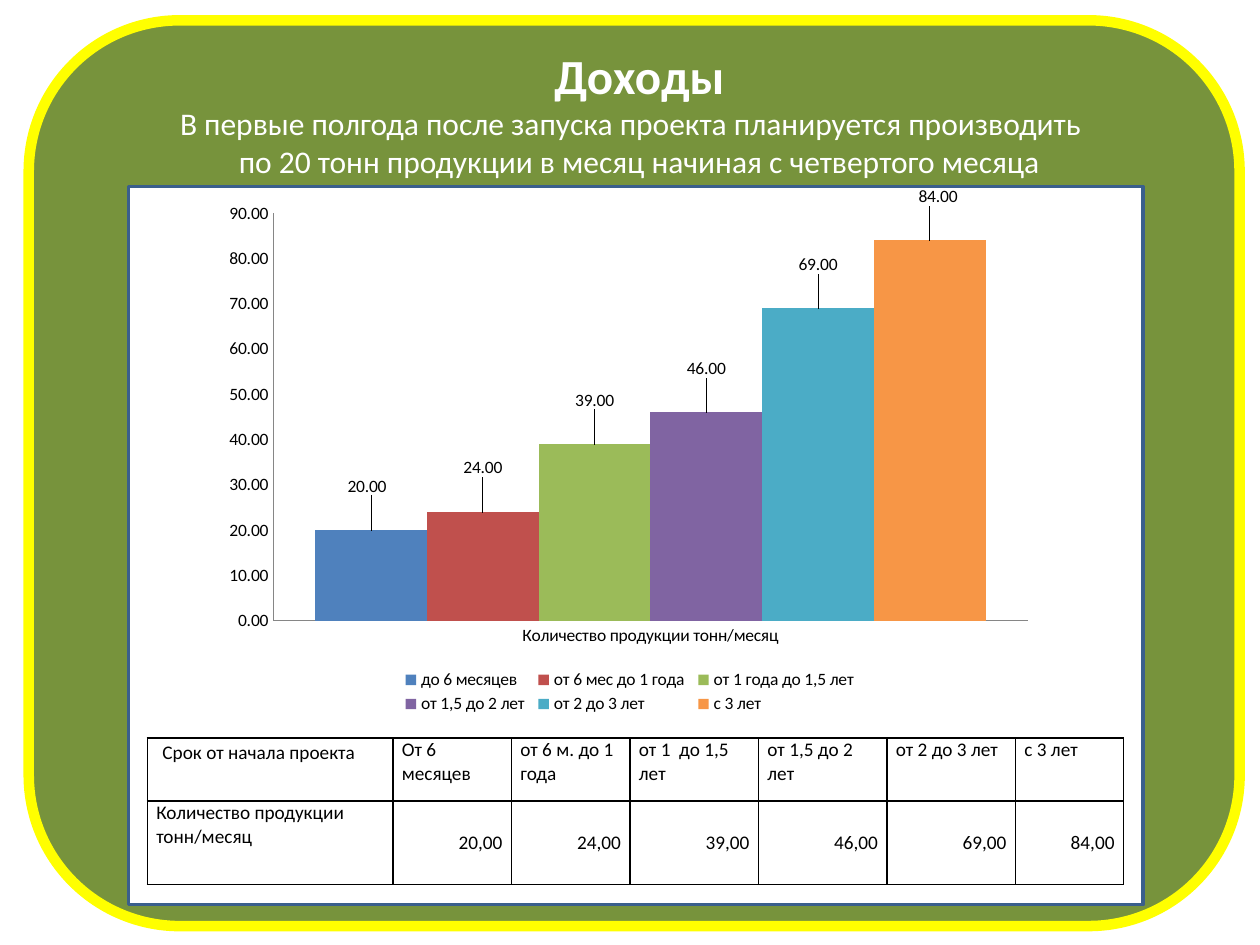
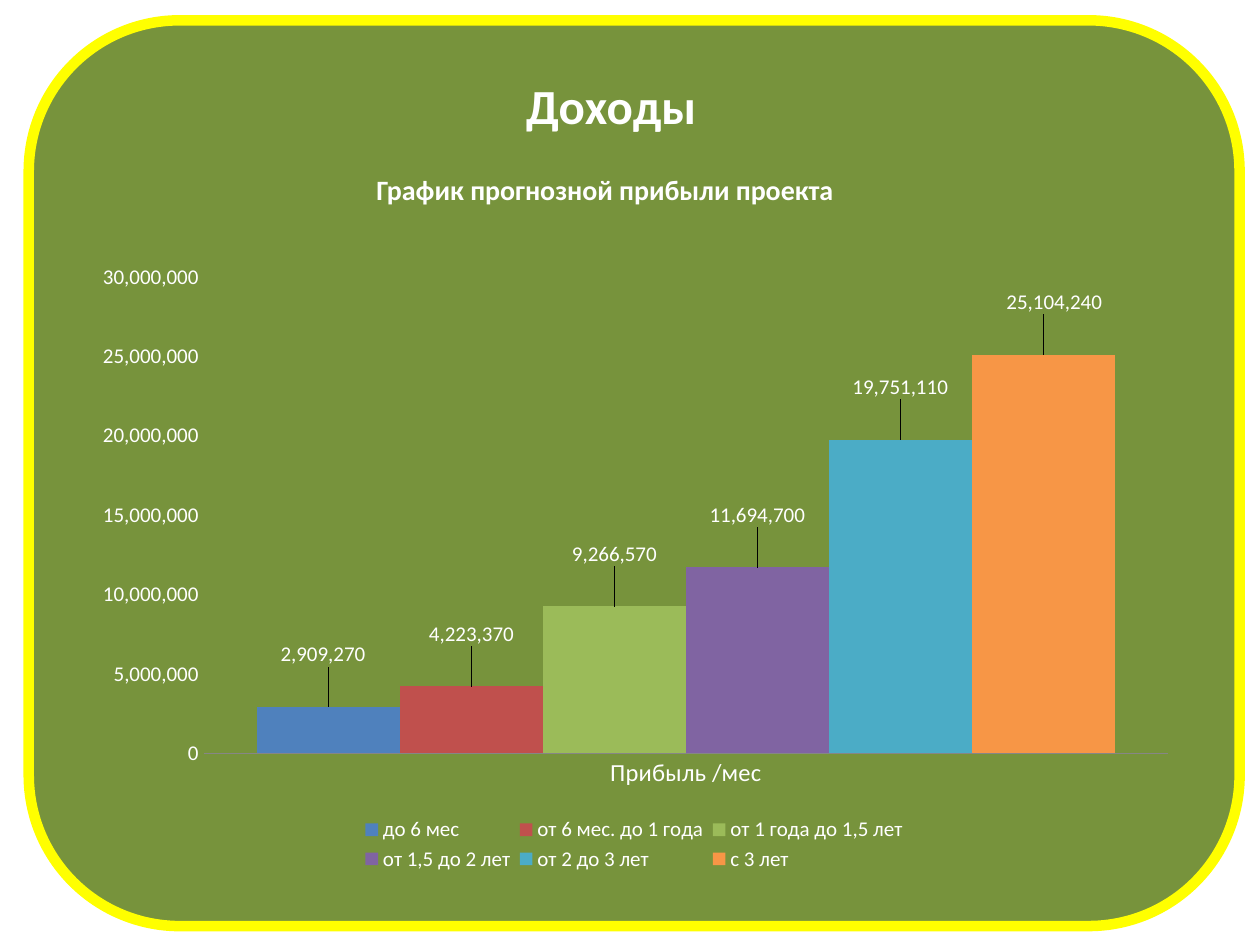
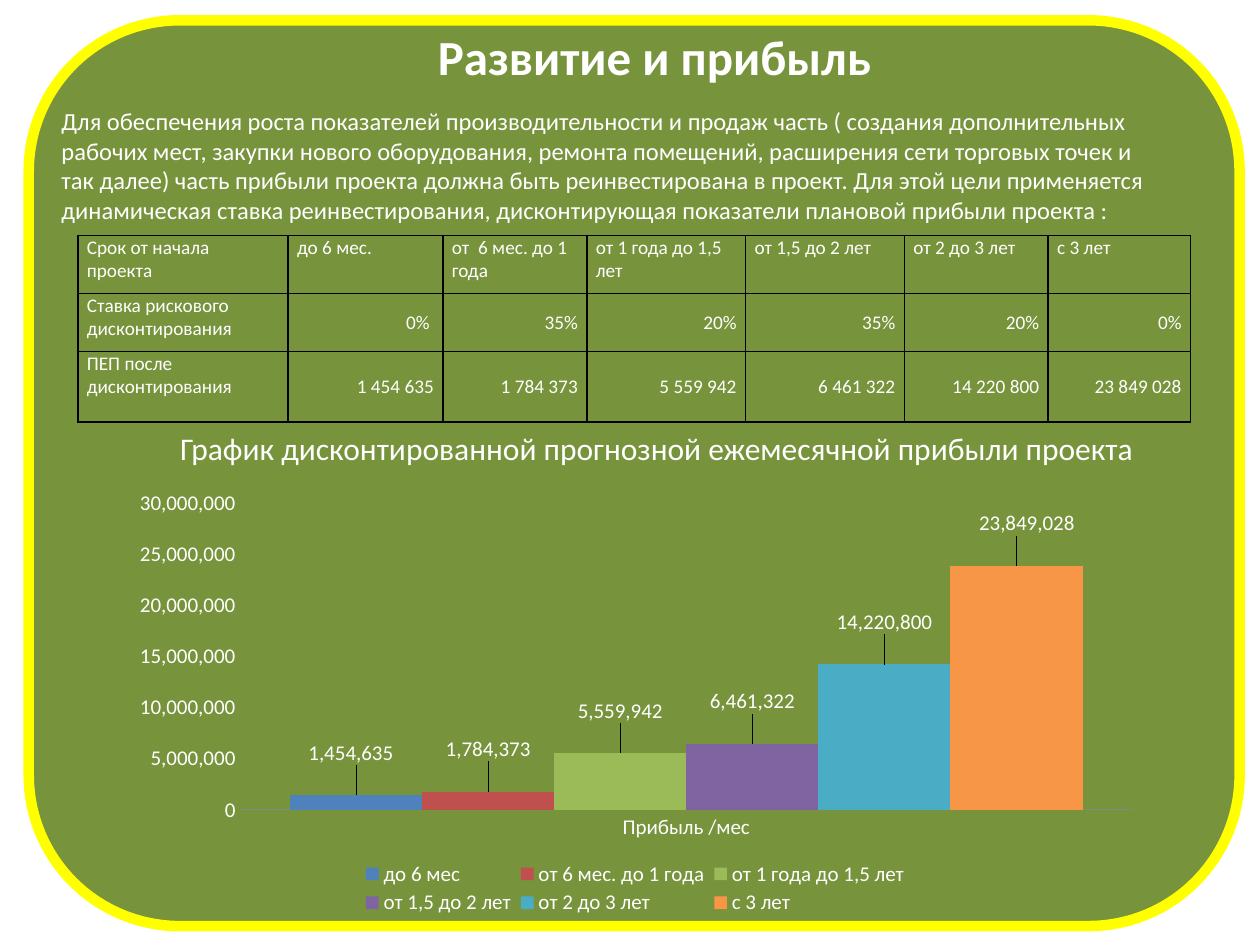
from lxml import etree
from pptx import Presentation
from pptx.chart.data import CategoryChartData
from pptx.dml.color import RGBColor
from pptx.enum.chart import XL_CHART_TYPE, XL_LABEL_POSITION, XL_LEGEND_POSITION, XL_TICK_MARK
from pptx.enum.shapes import MSO_SHAPE
from pptx.enum.text import MSO_ANCHOR, PP_ALIGN
from pptx.oxml import parse_xml
from pptx.oxml.ns import nsdecls, qn
from pptx.util import Cm, Pt

# Shared look
FONT = "Calibri"
WHITE, BLACK, GREEN, YELLOW, BLUE, GREY = "FFFFFF", "000000", "77933C", "FFFF00", "3A5F8C", "868686"
SERIES_COLORS = ["4F81BD", "C0504D", "9BBB59", "8064A2", "4BACC6", "F79646"]
LABEL_DX = [-0.005, 0, 0, 0, 0, 0.01]
LABEL_DY = -0.056
FRAME = (0.58, 0.41, 24.41, 18.26)
LEFT, CENTER, RIGHT = PP_ALIGN.LEFT, PP_ALIGN.CENTER, PP_ALIGN.RIGHT
TITLE = {"size": 28, "bold": True}

# Content: paragraphs are (text, alignment, font, paragraph spacing)
PERIODS = ["до 6 мес", "от 6 мес. до 1 года", "от 1 года до 1,5 лет",
           "от 1,5 до 2 лет", "от 2 до 3 лет", "с 3 лет"]

OUTPUT_TEXT = [
    ("Доходы", CENTER, TITLE, {}),
    ("В первые полгода после запуска проекта планируется производить", LEFT, {"size": 18}, {}),
    ("по 20 тонн продукции в месяц начиная с четвертого месяца", CENTER, {"size": 18}, {}),
]
OUTPUT_CHART = {
    "at": (4.34, 3.76, 16.71, 10.72), "category": "Количество продукции тонн/месяц",
    "names": ["до 6 месяцев", "от 6 мес до 1 года"] + PERIODS[2:],
    "values": [20, 24, 39, 46, 69, 84], "format": "0.00", "max": 90, "step": 10,
    "color": BLACK, "size": 10, "category_size": 10, "axis_line": GREY,
    "plot": (0.07, 0.04, 0.91, 0.775), "legend": (0.22, 0.9, 0.56, 0.1),
}
OUTPUT_TABLE = {
    "at": (2.97, 14.88), "color": BLACK, "space_after": 6,
    "cols": [4.95, 2.39, 2.39, 2.59, 2.59, 2.59, 2.18], "rows": [1.27, 1.68],
    "cells": [
        ["Срок от начала проекта", "От 6 месяцев", "от 6 м. до 1 года", "от 1  до 1,5 лет",
         "от 1,5 до 2 лет", "от 2 до 3 лет", "с 3 лет"],
        ["Количество продукции тонн/месяц", "20,00", "24,00", "39,00", "46,00", "69,00", "84,00"],
    ],
}

PROFIT_TEXT = [
    ("Доходы", CENTER, TITLE, {"space_after": Pt(12)}),
    ("График прогнозной прибыли проекта", LEFT, {"size": 16, "bold": True}, {"line_spacing": 1.5}),
]
PROFIT_CHART = {
    "at": (1.57, 5.08, 22.43, 12.57), "category": "Прибыль /мес", "names": PERIODS,
    "values": [2909270, 4223370, 9266570, 11694700, 19751110, 25104240],
    "format": "#,##0", "max": 30000000, "step": 5000000,
    "color": WHITE, "size": 12, "category_size": 14, "axis_line": None,
    "plot": (0.113, 0.04, 0.867, 0.764), "legend": (0.25, 0.9, 0.5, 0.1),
}

GROWTH_TEXT = [("Развитие и прибыль", CENTER, TITLE, {"space_after": Pt(12)})] + [
    (line, LEFT, {"size": 14}, {}) for line in (
        "Для обеспечения роста показателей производительности и продаж часть ( создания дополнительных",
        "рабочих мест, закупки нового оборудования, ремонта помещений, расширения сети торговых точек и",
        "так далее) часть прибыли проекта должна быть реинвестирована в проект. Для этой цели применяется",
        "динамическая ставка реинвестирования, дисконтирующая показатели плановой прибыли проекта :",
    )]
GROWTH_TABLE = {
    "at": (1.57, 4.75), "color": WHITE, "space_after": 0,
    "cols": [4.24, 3.12, 2.9, 3.2, 3.2, 2.9, 2.87], "rows": [1.17, 1.17, 1.42],
    "cells": [
        ["Срок от начала проекта", "до 6 мес.", "от  6 мес. до 1 года"] + PERIODS[2:],
        ["Ставка рискового дисконтирования", "0% ", "35%", "20%", "35%", "20%", "0%"],
        ["ПЕП после дисконтирования", "1 454 635", "1 784 373", "5 559 942",
         "6 461 322", "14 220 800", "23 849 028"],
    ],
}
GROWTH_CAPTION = [("График дисконтированной прогнозной ежемесячной прибыли проекта", LEFT, {"size": 18}, {})]
GROWTH_CHART = PROFIT_CHART | {
    "at": (2.39, 9.73, 20.83, 8.89), "category_size": 12,
    "values": [1454635, 1784373, 5559942, 6461322, 14220800, 23849028],
    "plot": (0.118, 0.046, 0.863, 0.696), "legend": (0.23, 0.85, 0.54, 0.14),
}


def rgb(color):
    return RGBColor.from_string(color)


def set_attrs(obj, values):
    for name, value in values.items():
        setattr(obj, name, value)


def set_font(font, size, color=WHITE, bold=False, name=FONT):
    set_attrs(font, {"size": Pt(size), "bold": bold, "name": name})
    font.color.rgb = rgb(color)


def add_box(s, kind, at, fill, line, width):
    sp = s.shapes.add_shape(kind, *map(Cm, at))
    sp.shadow.inherit = False
    sp.fill.solid()
    sp.fill.fore_color.rgb = rgb(fill)
    sp.line.color.rgb = rgb(line)
    sp.line.width = Pt(width)


def add_text(s, at, paragraphs, wrap=False):
    tf = s.shapes.add_textbox(*map(Cm, at)).text_frame
    tf.word_wrap = wrap
    for i, (text, align, font, spacing) in enumerate(paragraphs):
        p = tf.add_paragraph() if i else tf.paragraphs[0]
        set_attrs(p, {"alignment": align, **spacing})
        r = p.add_run()
        r.text = text
        set_font(r.font, **font)


def add_borders(cell):
    tc_pr = cell._tc.get_or_add_tcPr()
    for i, side in enumerate("LRTB"):
        tc_pr.insert(i, parse_xml(
            f'<a:ln{side} {nsdecls("a")} w="12700"><a:solidFill><a:srgbClr val="{BLACK}"/>'
            f'</a:solidFill></a:ln{side}>'))


def add_table(s, spec_data):
    cols, rows, cells = (spec_data[key] for key in ("cols", "rows", "cells"))
    size = (sum(cols), sum(rows))
    table = s.shapes.add_table(len(rows), len(cols), *map(Cm, spec_data["at"] + size)).table
    set_attrs(table, {"first_row": False, "horz_banding": False})
    for col, width in zip(table.columns, cols):
        col.width = Cm(width)
    for i, (row, height) in enumerate(zip(table.rows, rows)):
        row.height = Cm(height)
        for j, text in enumerate(cells[i]):
            cell = table.cell(i, j)
            is_value = i > 0 and j > 0
            set_attrs(cell, {"margin_left": Cm(0.18), "margin_right": Cm(0.18),
                             "margin_top": 0, "margin_bottom": 0,
                             "vertical_anchor": MSO_ANCHOR.MIDDLE if is_value else MSO_ANCHOR.TOP})
            cell.fill.background()
            add_borders(cell)
            p = cell.text_frame.paragraphs[0]
            if is_value:
                set_attrs(p, {"alignment": RIGHT, "space_after": Pt(spec_data["space_after"])})
            if i == j == 0 and spec_data is OUTPUT_TABLE:
                r = p.add_run()
                r.text = " "
                set_font(r.font, 14, BLACK, name="Times New Roman")
            r = p.add_run()
            r.text = text
            set_font(r.font, 11, spec_data["color"])


def layout_xml(**parts):
    tags = "".join(f'<c:{tag} val="{value}"/>' for tag, value in parts.items())
    return parse_xml(f'<c:layout {nsdecls("c")}><c:manualLayout>{tags}</c:manualLayout></c:layout>')


def place(element, index, box, **target):
    for old in element.findall(qn("c:layout")):
        element.remove(old)
    x, y, w, h = box
    element.insert(index, layout_xml(**target, xMode="edge", yMode="edge", x=x, y=y, w=w, h=h))


def add_chart(s, c):
    data = CategoryChartData(number_format=c["format"])
    data.categories = [c["category"]]
    for name, value in zip(c["names"], c["values"]):
        data.add_series(name, [value])
    chart = s.shapes.add_chart(XL_CHART_TYPE.COLUMN_CLUSTERED, *map(Cm, c["at"]), data).chart
    set_attrs(chart, {"has_title": False, "has_legend": True})
    set_font(chart.font, c["size"], c["color"])
    plot = chart.plots[0]
    set_attrs(plot, {"gap_width": 75, "overlap": 0, "vary_by_categories": False})

    # Axes
    for axis, size, line in ((chart.category_axis, c["category_size"], GREY),
                             (chart.value_axis, c["size"], c["axis_line"])):
        set_attrs(axis, {"major_tick_mark": XL_TICK_MARK.NONE, "minor_tick_mark": XL_TICK_MARK.NONE,
                         "has_major_gridlines": False})
        set_font(axis.tick_labels.font, size, c["color"])
        if line:
            axis.format.line.color.rgb = rgb(line)
        else:
            axis.format.line.fill.background()
    set_attrs(chart.value_axis, {"minimum_scale": 0, "maximum_scale": c["max"], "major_unit": c["step"]})
    set_attrs(chart.value_axis.tick_labels, {"number_format": c["format"], "number_format_is_linked": False})

    # Columns with raised value labels
    for series, color, dx in zip(plot.series, SERIES_COLORS, LABEL_DX):
        series.format.fill.solid()
        series.format.fill.fore_color.rgb = rgb(color)
        label = series.points[0].data_label
        label.position = XL_LABEL_POSITION.OUTSIDE_END
        set_font(label.font, c["size"], c["color"])
        d_lbl = series._element.find(".//" + qn("c:dLbl"))
        d_lbl.insert(1, layout_xml(x=dx, y=LABEL_DY))
        num_fmt = etree.Element(qn("c:numFmt"), formatCode=c["format"], sourceLinked="0")
        d_lbl.insert(2, num_fmt)

    # Plot area and two-row legend
    legend = chart.legend
    set_attrs(legend, {"position": XL_LEGEND_POSITION.BOTTOM, "include_in_layout": False})
    set_font(legend.font, c["size"], c["color"])
    place(legend._element, 1, c["legend"])
    place(chart._chartSpace.chart.plotArea, 0, c["plot"], layoutTarget="inner")


def add_framed_slide(prs):
    s = prs.slides.add_slide(prs.slide_layouts[6])
    add_box(s, MSO_SHAPE.ROUNDED_RECTANGLE, FRAME, GREEN, YELLOW, 6)
    return s


def main():
    prs = Presentation()
    set_attrs(prs, {"slide_width": Cm(25.4), "slide_height": Cm(19.05)})

    # Output volumes
    s = add_framed_slide(prs)
    add_text(s, (3.38, 0.79, 19.02, 3), OUTPUT_TEXT)
    add_box(s, MSO_SHAPE.RECTANGLE, (2.59, 3.76, 20.45, 14.48), WHITE, BLUE, 2)
    add_chart(s, OUTPUT_CHART)
    add_table(s, OUTPUT_TABLE)

    # Profit forecast
    s = add_framed_slide(prs)
    add_text(s, (7.34, 1.4, 9.96, 2.9), PROFIT_TEXT)
    add_chart(s, PROFIT_CHART)

    # Growth and discounted profit
    s = add_framed_slide(prs)
    add_text(s, (0.99, 0.41, 24.41, 4.24), GROWTH_TEXT, wrap=True)
    add_table(s, GROWTH_TABLE)
    add_chart(s, GROWTH_CHART)
    add_text(s, (3.38, 8.53, 19.94, 1.02), GROWTH_CAPTION)

    prs.save("out.pptx")


if __name__ == "__main__":
    main()
